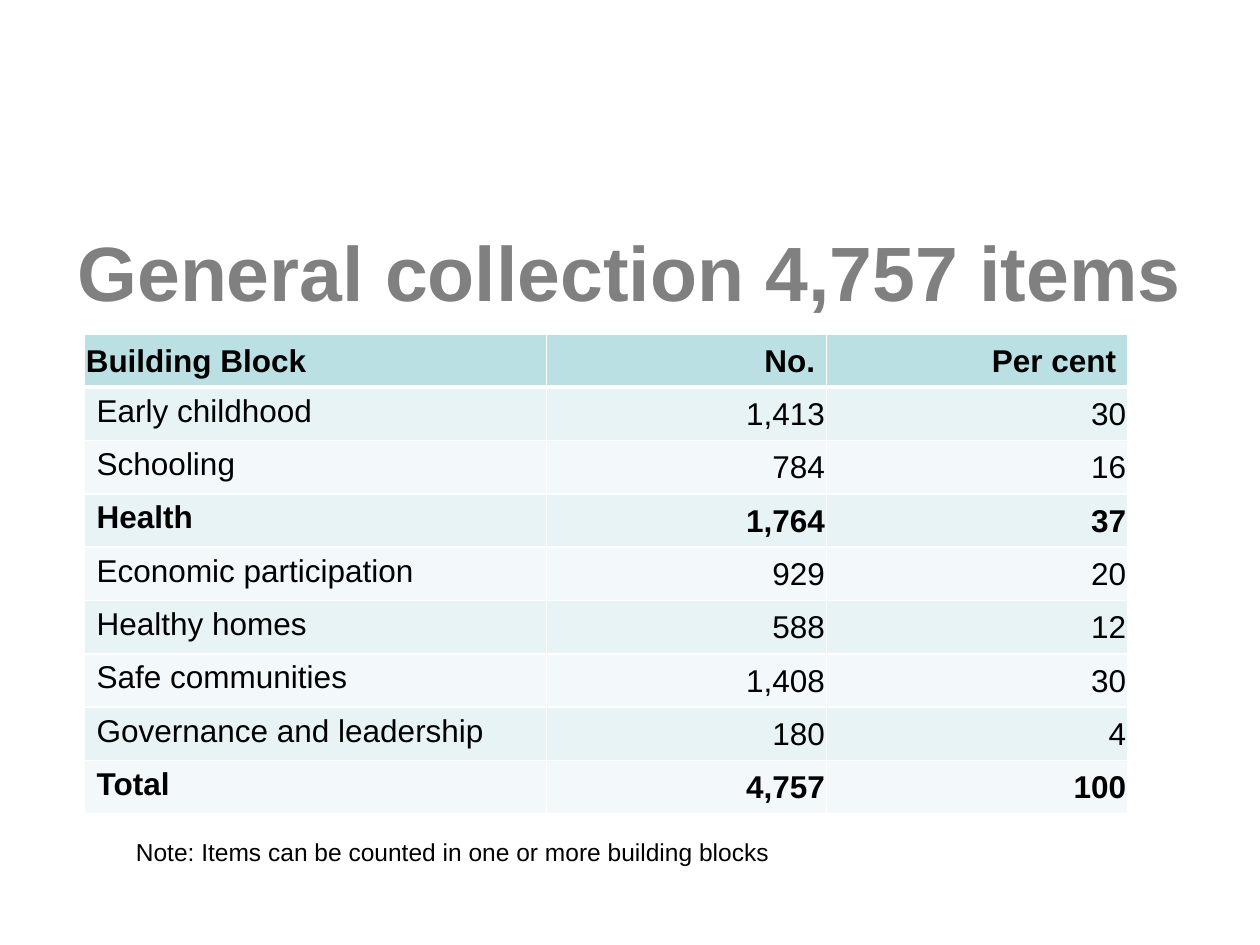
from lxml.etree import SubElement
from pptx import Presentation
from pptx.dml.color import RGBColor
from pptx.enum.text import MSO_ANCHOR, PP_ALIGN
from pptx.oxml.ns import qn
from pptx.util import Cm, Pt

BLACK = RGBColor(0x00, 0x00, 0x00)
GREY = RGBColor(0x80, 0x80, 0x80)
WHITE = RGBColor(0xFF, 0xFF, 0xFF)
HEADER_TEAL = RGBColor(0xBB, 0xE0, 0xE3)
BANDS = (RGBColor(0xF3, 0xF9, 0xFA), RGBColor(0xE7, 0xF3, 0xF4))

HEADINGS = ("Building Block", "No.", "Per cent")
BLOCKS = (
    ("Early childhood", "1,413", "30"),
    ("Schooling", "784", "16"),
    ("Health", "1,764", "37"),
    ("Economic participation", "929", "20"),
    ("Healthy homes", "588", "12"),
    ("Safe communities", "1,408", "30"),
    ("Governance and leadership", "180", "4"),
    ("Total", "4,757", "100"),
)
EMPHASISED = ("Health", "Total")
COLUMN_WIDTHS = (9.32, 5.64, 6.07)

TIGHT = {"margin_left": Cm(0.03), "margin_top": Cm(0.03),
         "margin_right": Cm(0.03), "margin_bottom": Cm(0),
         "vertical_anchor": MSO_ANCHOR.MIDDLE}
HEADING_NUMBER = {**TIGHT, "margin_right": Cm(0.23)}
ROW_LABEL = {"margin_left": Cm(0.25), "margin_top": Cm(0.13),
             "margin_right": Cm(0.25), "margin_bottom": Cm(0.13),
             "vertical_anchor": MSO_ANCHOR.TOP}


def apply_format(target, values):
    """Set every attribute named in values on target."""
    for name, value in values.items():
        setattr(target, name, value)


def write(frame, wording, size, color=BLACK, bold=False, align=PP_ALIGN.LEFT):
    """Put one formatted paragraph in a text frame."""
    paragraph = frame.paragraphs[0]
    paragraph.alignment = align
    run = paragraph.add_run()
    run.text = wording
    apply_format(run.font, {"name": "Arial", "size": Pt(size), "bold": bold})
    run.font.color.rgb = color


def add_text(slide, bounds, wording, size, anchor=MSO_ANCHOR.TOP, **style):
    """Add a wrapping text box with bounds in centimetres."""
    frame = slide.shapes.add_textbox(*map(Cm, bounds)).text_frame
    apply_format(frame, {"word_wrap": True, "vertical_anchor": anchor})
    write(frame, wording, size, **style)


def add_borders(cell, widths):
    """Draw white cell borders with widths in points by side."""
    properties = cell._tc.get_or_add_tcPr()
    for side, width in widths.items():
        line = SubElement(properties, qn(f"a:ln{side}"), w=str(Pt(width)))
        fill = SubElement(line, qn("a:solidFill"))
        SubElement(fill, qn("a:srgbClr"), val=str(WHITE))


def cell_margins(row, column):
    """Choose the margins and anchor for a cell by its place."""
    if row == 0:
        return HEADING_NUMBER if column else TIGHT
    return TIGHT if column else ROW_LABEL


def add_block_table(slide):
    """Add the table of items by building block."""
    rows = (HEADINGS, *BLOCKS)
    table = slide.shapes.add_table(
        len(rows), len(HEADINGS),
        Cm(1.7), Cm(6.73), Cm(sum(COLUMN_WIDTHS)), Cm(9.68)).table
    for column, width in zip(table.columns, COLUMN_WIDTHS):
        column.width = Cm(width)
    for row, entries in enumerate(rows):
        bold = row == 0 or entries[0] in EMPHASISED
        borders = {"L": 1, "R": 1, "T": 3 if row == 1 else 1,
                   "B": 3 if row == 0 else 1}
        for column, entry in enumerate(entries):
            cell = table.cell(row, column)
            apply_format(cell, cell_margins(row, column))
            add_borders(cell, borders)
            cell.fill.solid()
            cell.fill.fore_color.rgb = BANDS[row % 2] if row else HEADER_TEAL
            write(cell.text_frame, entry, 18, bold=bold,
                  align=PP_ALIGN.RIGHT if column else PP_ALIGN.LEFT)


def main():
    """Build and save the slide."""
    presentation = Presentation()
    apply_format(presentation, {"slide_width": Cm(25.4), "slide_height": Cm(19.05)})
    slide = presentation.slides.add_slide(presentation.slide_layouts[6])
    add_text(slide, (1.27, 3.86, 22.86, 3.18), "General collection 4,757 items",
             44, MSO_ANCHOR.MIDDLE, color=GREY, bold=True, align=PP_ALIGN.CENTER)
    add_text(slide, (2.49, 16.74, 16.59, 0.84),
             "Note: Items can be counted in one or more building blocks", 14)
    add_block_table(slide)
    presentation.save("out.pptx")


if __name__ == "__main__":
    main()
